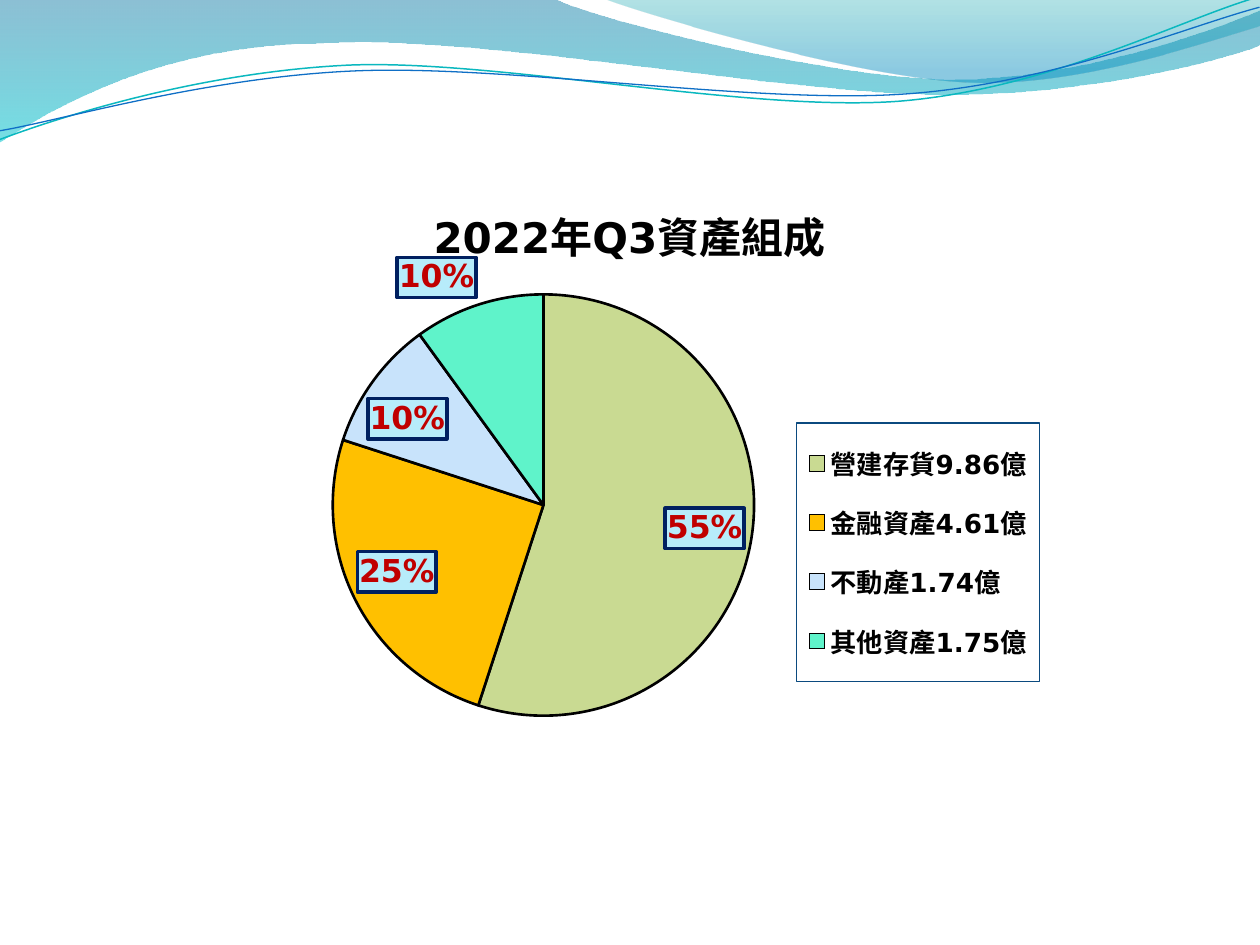
from pptx import Presentation
from pptx.chart.data import CategoryChartData
from pptx.dml.color import RGBColor
from pptx.enum.chart import XL_CHART_TYPE as ChartType
from pptx.enum.chart import XL_LABEL_POSITION as LabelPosition
from pptx.enum.chart import XL_LEGEND_POSITION as LegendPosition
from pptx.oxml import parse_xml
from pptx.oxml.ns import nsdecls, qn
from pptx.util import Emu, Pt

PX = 914400 / 126
FONT = "DejaVu Sans"
WAVE_ROTATION = 357.3
COLORS = {
    "text": "000000", "label_text": "C00000", "label_fill": "B7ECFA",
    "label_border": "002060", "legend_border": "0B4A7F",
    "band_blue": "0074A1", "band_cyan": "00C6CF",
    "band_teal": "00A1A9", "band_sky": "008BBF",
    "wave_teal": "0AB8BF", "wave_blue": "0F6FC6",
    "construction": "C9DA92", "financial": "FFC000",
    "property": "C8E3FB", "other": "5FF3CA",
}
ASSETS = [
    ("營建存貨9.86億", 0.55, "construction"),
    ("金融資產4.61億", 0.25, "financial"),
    ("不動產1.74億", 0.10, "property"),
    ("其他資產1.75億", 0.10, "other"),
]

# Each outline is a start point and segments: 2 numbers a line, 6 a Bézier curve.
BANDS = [
    ((0, -1), [(554, -1), (600, 21, 837, 79, 955, 79),
               (1075, 79, 1207, 33, 1260, 11), (1261, 45),
               (1239, 55, 1096, 96, 940, 94), (784, 94, 481, 35, 324, 43),
               (163, 44, 58, 105, -1, 142)],
     [(0, "band_blue", 45), (1, "band_cyan", 55)]),
    ((604, -1), [(641, 14, 859, 78, 969, 82),
                 (1079, 87, 1211, 40, 1260, 26), (1260, 0)],
     [(0, "band_teal", 30), (0.8, "band_sky", 45)]),
]
WAVES = [
    ((-3, 110), [(59, 90, 200, 52, 350, 52), (498, 53, 745, 118, 897, 114),
                 (1048, 109, 1184, 45, 1260, 27)], "wave_teal", 0.85),
    ((-2, 101), [(58, 94, 207, 57, 357, 58), (508, 59, 751, 110, 902, 107),
                 (1052, 104, 1187, 53, 1262, 37)], "wave_blue", 0.75),
]


def rgb(name):
    return RGBColor.from_string(COLORS[name])


def curve_segments(shape, segments):
    """Join the three line steps of each Bézier segment into one curve."""
    steps = iter(list(shape.element.iter(qn("a:lnTo"))))
    for segment in segments:
        group = [next(steps) for _ in range(len(segment) // 2)]
        if len(group) == 3:
            curve = parse_xml(f'<a:cubicBezTo {nsdecls("a")}/>')
            group[0].addprevious(curve)
            for step in group:
                curve.append(step[0])
                step.getparent().remove(step)


def set_font(font, size, color="text", bold=True):
    values = {"name": FONT, "size": Pt(size), "bold": bold}
    for key, value in values.items():
        setattr(font, key, value)
    font.color.rgb = rgb(color)


def set_layout(element, index, target=None, **fractions):
    """Place a chart part by fractions of the chart area."""
    for old in element.findall(qn("c:layout")):
        element.remove(old)
    modes = "".join(f'<c:{key}Mode val="edge"/>' for key in "xy")
    sizes = "".join(f'<c:{key} val="{value}"/>' for key, value in fractions.items())
    inner = f'<c:layoutTarget val="{target}"/>' if target else ""
    element.insert(index, parse_xml(
        f'<c:layout {nsdecls("c")}><c:manualLayout>{inner}{modes}{sizes}'
        '</c:manualLayout></c:layout>'))


def set_box(element, border, width, fill=None):
    """Frame the legend or the data labels."""
    paint = (f'<a:solidFill><a:srgbClr val="{COLORS[fill]}"/></a:solidFill>'
             if fill else "<a:noFill/>")
    for old in element.findall(qn("c:spPr")):
        element.remove(old)
    element.find(qn("c:txPr")).addprevious(parse_xml(
        f'<c:spPr {nsdecls("c", "a")}>{paint}<a:ln w="{Pt(width)}"><a:solidFill>'
        f'<a:srgbClr val="{COLORS[border]}"/></a:solidFill></a:ln></c:spPr>'))


class SlideBuilder:
    """Holds the current slide and draws its elements in px."""

    def __init__(self, slide):
        self.slide = slide

    def outline(self, start, segments, close):
        builder = self.slide.shapes.build_freeform(*start, scale=PX)
        points = [segment[i:i + 2] for segment in segments
                  for i in range(0, len(segment), 2)]
        builder.add_line_segments(points, close=close)
        shape = builder.convert_to_shape()
        curve_segments(shape, segments)
        shape.shadow.inherit = False
        return shape

    def band(self, start, segments, stops):
        shape = self.outline(start, segments, True)
        shape.line.fill.background()
        shape.fill.gradient()
        shape.fill.gradient_angle = 270
        for stop, (position, color, _) in zip(shape.fill.gradient_stops, stops):
            stop.position = position
            stop.color.rgb = rgb(color)
        colors = shape.element.spPr.iter(qn("a:srgbClr"))
        for color, (_, _, opacity) in zip(list(colors), stops):
            color.append(parse_xml(
                f'<a:alpha {nsdecls("a")} val="{opacity * 1000}"/>'))

    def wave(self, start, segments, color, width):
        shape = self.outline(start, segments, False)
        shape.rotation = WAVE_ROTATION
        shape.fill.background()
        shape.line.color.rgb = rgb(color)
        shape.line.width = Pt(width)

    def pie(self, left, top, width, height, title, assets):
        data = CategoryChartData(number_format="0%")
        data.categories = [name for name, _, _ in assets]
        data.add_series("Series 1", [value for _, value, _ in assets])
        box = [Emu(round(length * PX)) for length in (left, top, width, height)]
        chart = self.slide.shapes.add_chart(ChartType.PIE, *box, data).chart
        set_font(chart.font, 10, bold=False)
        plot = chart.plots[0]
        plot.vary_by_categories = True
        series = plot.series[0]
        for index, (_, _, color) in enumerate(assets):
            style = series.points[index].format
            style.fill.solid()
            style.fill.fore_color.rgb = rgb(color)
            style.line.color.rgb = rgb("text")
            style.line.width = Pt(1.5)
        set_layout(chart.element.find(".//" + qn("c:plotArea")), 0, "inner",
                   x=0.146, y=0.202, w=0.503, h=0.707)
        self.pie_title(chart, title)
        self.pie_legend(chart)
        self.pie_labels(chart, series)

    def pie_title(self, chart, title):
        chart.has_title = True
        frame = chart.chart_title.text_frame
        frame.text = title
        set_font(frame.paragraphs[0].runs[0].font, 24)

    def pie_legend(self, chart):
        chart.has_legend = True
        legend = chart.legend
        legend.position = LegendPosition.RIGHT
        legend.include_in_layout = False
        set_font(legend.font, 15)
        element = chart.element.find(".//" + qn("c:legend"))
        set_layout(element, 1, x=0.699, y=0.418, w=0.29, h=0.433)
        set_box(element, "legend_border", 0.75)

    def pie_labels(self, chart, series):
        labels = series.data_labels
        values = {"show_value": True, "number_format": "0%",
                  "number_format_is_linked": False,
                  "position": LabelPosition.BEST_FIT}
        for key, value in values.items():
            setattr(labels, key, value)
        last_label = series.points[len(ASSETS) - 1].data_label
        last_label.position = LabelPosition.OUTSIDE_END
        for item, tag in ((labels, "c:dLbls"), (last_label, "c:dLbl")):
            set_font(item.font, 18, "label_text")
            set_box(chart.element.find(f".//{qn('c:ser')}//{qn(tag)}"),
                    "label_border", 2, "label_fill")


def main():
    presentation = Presentation()
    presentation.slide_width = Emu(round(1260 * PX))
    presentation.slide_height = Emu(round(945 * PX))
    builder = SlideBuilder(
        presentation.slides.add_slide(presentation.slide_layouts[6]))
    for band in BANDS:
        builder.band(*band)
    for wave in WAVES:
        builder.wave(*wave)
    builder.pie(210, 174, 839, 596, "2022年Q3資產組成", ASSETS)
    presentation.save("out.pptx")


if __name__ == "__main__":
    main()
